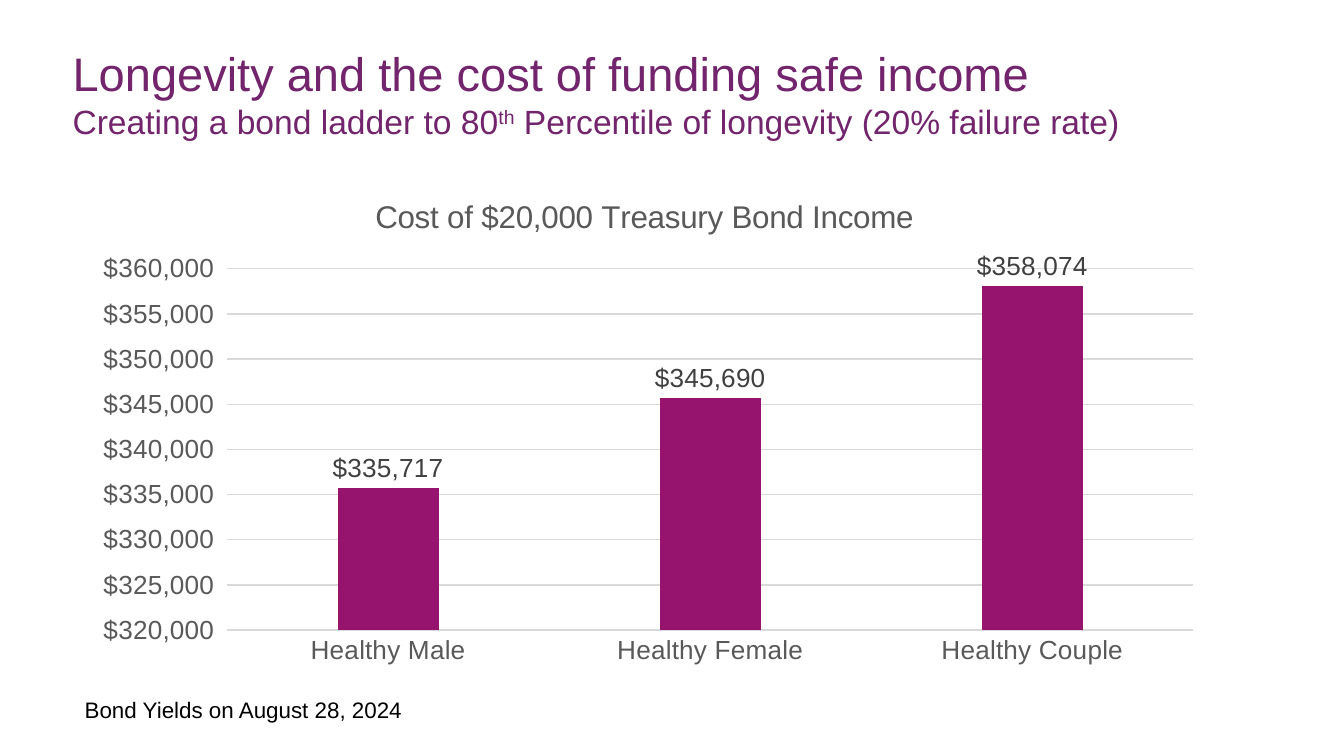
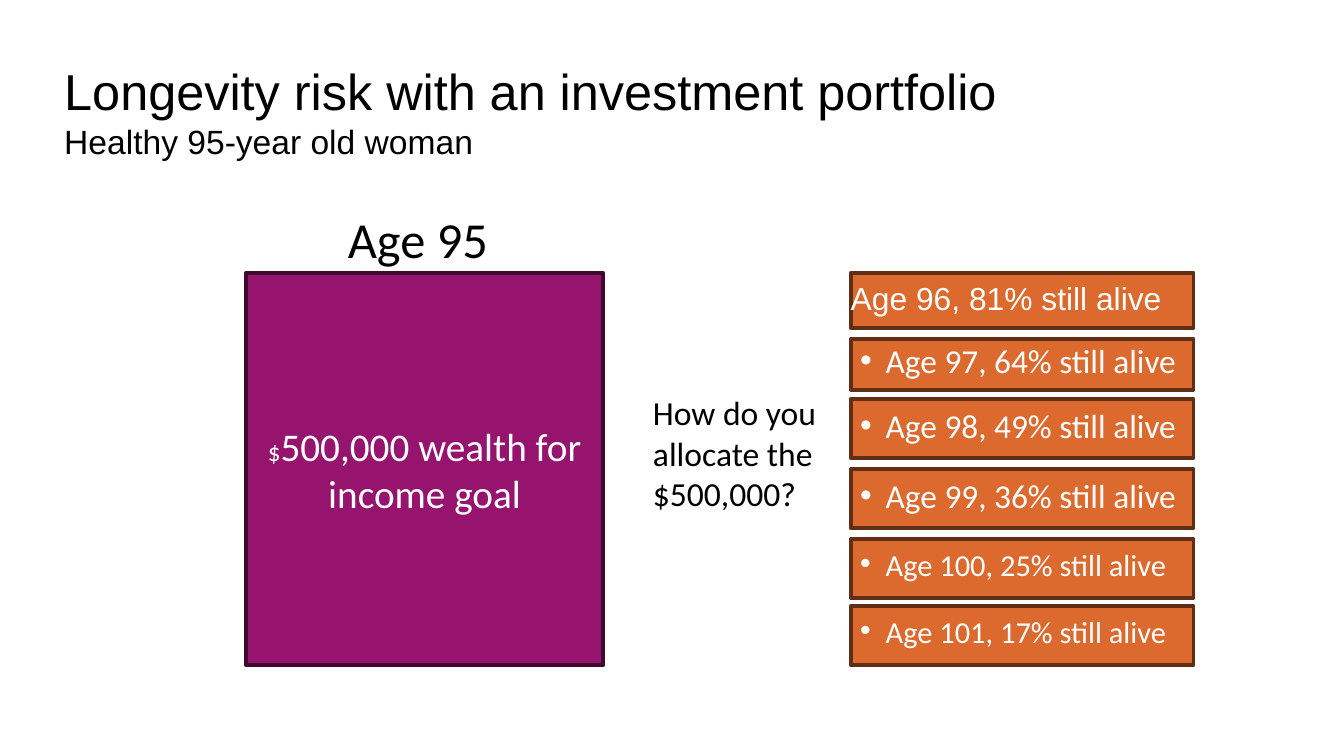
import pptx
import pptx.chart.data
import pptx.dml.color
import pptx.enum.chart
import pptx.enum.shapes
import pptx.enum.text
import pptx.oxml
import pptx.oxml.ns
import pptx.util

PX = 9144  # EMU per px, 100 px to the inch
COLORS = {
    "black": "000000",
    "white": "FFFFFF",
    "title": "72246C",
    "purple": "96146E",
    "purple_edge": "420930",
    "orange": "DC6A2F",
    "orange_edge": "602E15",
    "axis": "595959",
    "label": "404040",
    "grid": "D9D9D9",
}
DOLLARS = r'_("$"* #,##0_);_("$"* \(#,##0\);_("$"* "-"??_);_(@_)'
ANCHOR = pptx.enum.text.MSO_ANCHOR
ALIGN = pptx.enum.text.PP_ALIGN


def color(name):
    return pptx.dml.color.RGBColor.from_string(COLORS[name])


def px(*lengths):
    return [length * PX for length in lengths]


def set_font(font, size, ink, name="Arial"):
    font.size = pptx.util.Pt(size)
    font.name = name
    font.bold = False
    font.color.rgb = color(ink)


def set_frame(frame, anchor, insets):
    """Wrap the text; insets are (horizontal, vertical) in px."""
    frame.word_wrap = True
    frame.vertical_anchor = anchor
    frame.margin_left = frame.margin_right = insets[0] * PX
    frame.margin_top = frame.margin_bottom = insets[1] * PX


def add_span(para, text, size=None):
    span = para.add_run()
    span.text = text
    if size:
        span.font.size = pptx.util.Pt(size)
    return span


def add_text(page, place, text, size, ink="black", name="Calibri",
             anchor=ANCHOR.TOP, insets=(10, 5)):
    box = page.shapes.add_textbox(*px(*place))
    set_frame(box.text_frame, anchor, insets)
    para = box.text_frame.paragraphs[0]
    set_font(para.font, size, ink, name)
    add_span(para, text)
    return para


def add_title(page, place, title, size, subtitle, ink="black", insets=(10, 5)):
    """Write a title and a smaller second line of (text, baseline) pairs."""
    para = add_text(page, place, title, size, ink, "Arial", ANCHOR.BOTTOM, insets)
    para.add_line_break()
    for text, baseline in subtitle:
        span = add_span(para, text, 18)
        if baseline:
            span.font._element.set("baseline", str(baseline))


def add_block(page, place, fill, edge, insets=(10, 5)):
    block = page.shapes.add_shape(
        pptx.enum.shapes.MSO_SHAPE.RECTANGLE, *px(*place))
    block.shadow.inherit = False
    block.fill.solid()
    block.fill.fore_color.rgb = color(fill)
    block.line.color.rgb = color(edge)
    block.line.width = pptx.util.Pt(2)
    set_frame(block.text_frame, ANCHOR.MIDDLE, insets)
    return block.text_frame.paragraphs[0]


def add_bullet(para, indent):
    properties = para._p.get_or_add_pPr()
    properties.set("marL", str(indent * PX))
    properties.set("indent", str(-indent * PX))
    for tag, key, value in (("buFont", "typeface", "Arial"), ("buChar", "char", "•")):
        properties.append(pptx.oxml.parse_xml(
            f'<a:{tag} {pptx.oxml.ns.nsdecls("a")} {key}="{value}"/>'))


def add_age_row(page, top, height, text, size, spacing, bulleted=True):
    para = add_block(page, (633, top, 255, height), "orange", "orange_edge",
                     (7, 4) if bulleted else (0, 0))
    para.alignment = ALIGN.LEFT
    para.line_spacing = spacing
    para.space_before = pptx.util.Pt(7.5 if bulleted else 6)
    if bulleted:
        add_bullet(para, 19)
    else:
        para.space_after = pptx.util.Pt(9)
    set_font(para.font, size, "white", "Calibri" if bulleted else "Arial")
    add_span(para, text)


def set_layout(owner, index, chart_size, place, inner=False):
    """Place a chart part, in px from the chart's corner: x, y and maybe w, h."""
    for old in owner.findall(pptx.oxml.ns.qn("c:layout")):
        owner.remove(old)
    target = '<c:layoutTarget val="inner"/>' if inner else ""
    modes = "".join(f'<c:{key}Mode val="edge"/>' for key in "xy")
    values = "".join(f'<c:{key} val="{length / whole}"/>'
                     for key, length, whole in zip("xywh", place, chart_size * 2))
    owner.insert(index, pptx.oxml.parse_xml(
        f'<c:layout {pptx.oxml.ns.nsdecls("c")}><c:manualLayout>'
        f'{target}{modes}{values}</c:manualLayout></c:layout>'))


def style_axis(axis):
    axis.major_tick_mark = axis.minor_tick_mark = pptx.enum.chart.XL_TICK_MARK.NONE
    set_font(axis.tick_labels.font, 14, "axis")


def style_line(line):
    line.color.rgb = color("grid")
    line.width = pptx.util.Pt(0.75)


def add_cost_chart(page, place):
    data = pptx.chart.data.CategoryChartData(number_format=DOLLARS)
    data.categories = ["Healthy Male", "Healthy Female", "Healthy Couple"]
    data.add_series("Series 1", [335717, 345690, 358074])
    chart = page.shapes.add_chart(
        pptx.enum.chart.XL_CHART_TYPE.COLUMN_CLUSTERED, *px(*place), data).chart
    set_font(chart.font, 14, "black")
    chart.has_legend = False

    chart.has_title = True
    para = chart.chart_title.text_frame.paragraphs[0]
    set_font(para.font, 16.8, "axis")
    add_span(para, "Cost of $20,000 Treasury Bond Income")
    size = place[2:]
    set_layout(chart.chart_title._element, 1, size, (221, 13))
    set_layout(chart._chartSpace.chart.plotArea, 0, size, (115, 71, 719, 269), True)

    style_axis(chart.category_axis)
    style_line(chart.category_axis.format.line)
    costs = chart.value_axis
    style_axis(costs)
    costs.minimum_scale, costs.maximum_scale, costs.major_unit = 320000, 360000, 5000
    costs.tick_labels.number_format = DOLLARS
    costs.tick_labels.number_format_is_linked = False
    costs.format.line.fill.background()
    style_line(costs.major_gridlines.format.line)

    plot = chart.plots[0]
    plot.gap_width, plot.overlap, plot.vary_by_categories = 219, -27, False
    fill = plot.series[0].format.fill
    fill.solid()
    fill.fore_color.rgb = color("purple")
    labels = plot.series[0].data_labels
    labels.show_value = True
    labels.position = pptx.enum.chart.XL_LABEL_POSITION.OUTSIDE_END
    labels.number_format = DOLLARS
    labels.number_format_is_linked = False
    set_font(labels.font, 14, "label")


def build_cost_page(page):
    add_title(page, (54, 40, 850, 65), "Longevity and the cost of funding safe income",
              25.2, [("Creating a bond ladder to 80", 0), ("th", 30000),
                     (" Percentile of longevity (20% failure rate)", 0)],
              "title", (0, 0))
    add_text(page, (63, 518, 375, 32), "Bond Yields on August 28, 2024", 12,
             name="Arial", insets=(0, 0))
    add_cost_chart(page, (54, 129, 850, 374))


def build_risk_page(page):
    wealth = add_block(page, (183, 203, 266, 292), "purple", "purple_edge")
    wealth.alignment = ALIGN.CENTER
    set_font(wealth.font, 21, "white", "Calibri")
    add_span(wealth, "$", 13.5)
    add_span(wealth, "500,000 wealth for income goal")
    add_text(page, (249, 150, 200, 56), "Age 95", 27)

    add_age_row(page, 203, 41, "Age 96, 81% still alive", 17, 0.9, bulleted=False)
    for top, height, age, alive in ((252, 38, 97, 64), (297, 44, 98, 49),
                                    (349, 44, 99, 36), (401, 44, 100, 25),
                                    (451, 44, 101, 17)):
        size, spacing = (17.9, 0.8) if age < 100 else (16.3, 0.7)
        add_age_row(page, top, height, f"Age {age}, {alive}% still alive", size, spacing)

    add_text(page, (476, 287, 165, 101), "How do you allocate the $500,000?", 18)
    add_title(page, (38, 40, 904, 85), "Longevity risk with an investment portfolio",
              27, [("Healthy 95-year old woman", 0)])


def main():
    deck = pptx.Presentation()
    deck.slide_width = 1000 * PX
    deck.slide_height = deck.slide_width * 9 // 16
    blank = deck.slide_layouts[6]
    for build in (build_cost_page, build_risk_page):
        build(deck.slides.add_slide(blank))
    deck.save("out.pptx")


if __name__ == "__main__":
    main()
